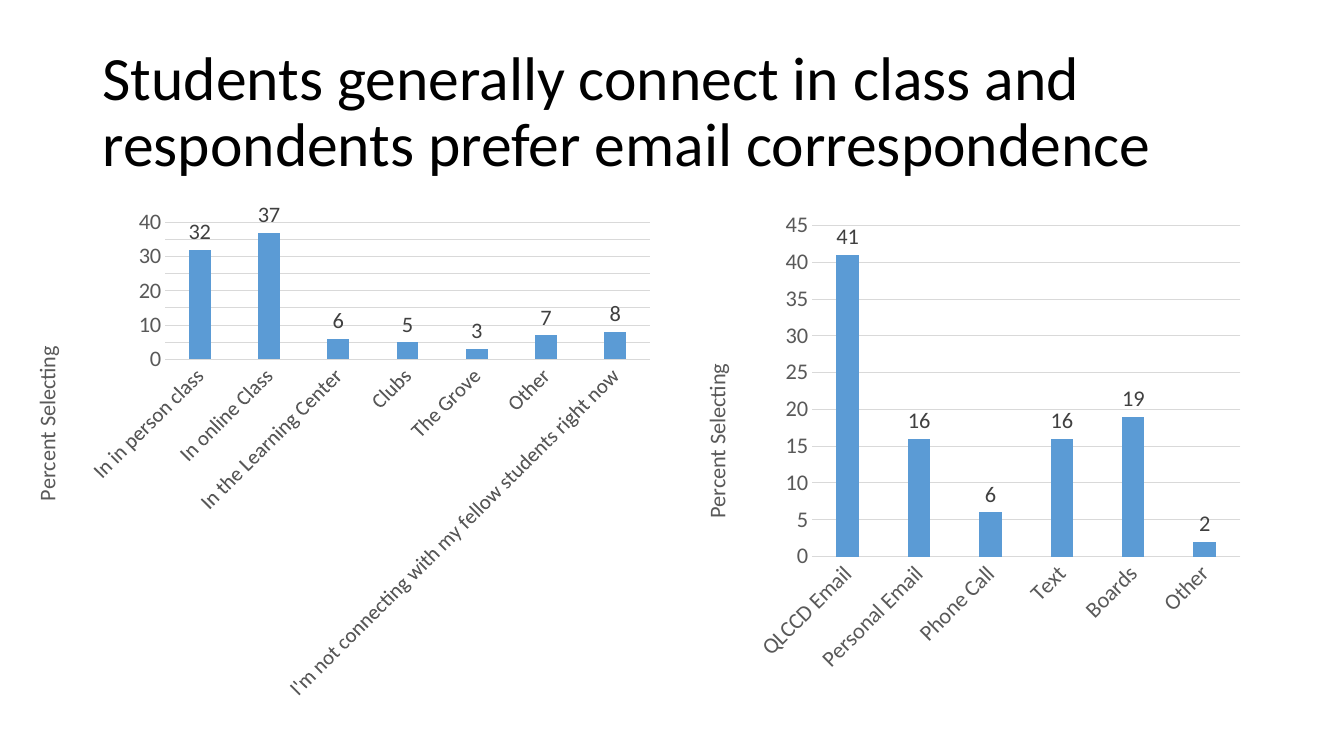
from dataclasses import dataclass

from lxml import etree
from pptx import Presentation
from pptx.chart.data import CategoryChartData
from pptx.dml.color import RGBColor
from pptx.enum.chart import XL_CHART_TYPE, XL_LABEL_POSITION, XL_TICK_MARK
from pptx.enum.text import MSO_ANCHOR, PP_ALIGN
from pptx.oxml.ns import qn
from pptx.util import Cm, Pt

COLUMNS = XL_CHART_TYPE.COLUMN_CLUSTERED
OUTSIDE_END = XL_LABEL_POSITION.OUTSIDE_END
NO_TICK = XL_TICK_MARK.NONE
MIDDLE = MSO_ANCHOR.MIDDLE
LEFT = PP_ALIGN.LEFT

TITLE_ONLY = 5
FONT = "Calibri"
BLACK, AXIS_GREY, LABEL_GREY = "000000", "595959", "404040"
RULE_GREY, BAR_BLUE = "D9D9D9", "5B9BD5"
CHART_TOP = Cm(5.08)


@dataclass(frozen=True)
class Survey:
    """One question's results; plot and caption are fractions of the chart."""
    left: float
    width: float
    height: float
    maximum: int
    choice_size: float
    plot: dict[str, float]
    caption: dict[str, float]
    percents: dict[str, int]


SURVEYS = (
    Survey(
        0.2, 16.51, 13.4, 40, 15,
        {"x": 0.24, "y": 0.03, "w": 0.74, "h": 0.26},
        {"x": 0.03, "y": 0.26},
        {"In in person class": 32, "In online Class": 37,
         "In the Learning Center": 6, "Clubs": 5, "The Grove": 3, "Other": 7,
         "I'm not connecting with my fellow students right now": 8},
    ),
    Survey(
        17.15, 14.4, 12.09, 45, 16,
        {"x": 0.23, "y": 0.05, "w": 0.75, "h": 0.69},
        {"x": 0.03, "y": 0.33},
        {"QLCCD Email": 41, "Personal Email": 16, "Phone Call": 6,
         "Text": 16, "Boards": 19, "Other": 2},
    ),
)


def rgb(value: str) -> RGBColor:
    return RGBColor.from_string(value)


def apply(target, formats: dict) -> None:
    for name, value in formats.items():
        setattr(target, name, value)


def style_font(font, size: float, color: str) -> None:
    apply(font, {"name": FONT, "size": Pt(size), "bold": False})
    font.color.rgb = rgb(color)


def style_line(line, color: str) -> None:
    line.color.rgb = rgb(color)
    line.width = Pt(0.75)


def place(parent, index: int, fractions: dict[str, float]) -> None:
    """Pin a chart part at fractions of the chart's size."""
    for automatic in parent.findall(qn("c:layout")):
        parent.remove(automatic)
    layout = etree.Element(qn("c:layout"))
    parent.insert(index, layout)
    manual = etree.SubElement(layout, qn("c:manualLayout"))
    settings = {"xMode": "edge", "yMode": "edge", **fractions}
    if "w" in fractions:
        settings = {"layoutTarget": "inner", **settings}
    for name, value in settings.items():
        etree.SubElement(manual, qn(f"c:{name}")).set("val", str(value))


def rotate(body, degrees: int) -> None:
    body.set("rot", str(degrees * 60000))
    body.set("vert", "horz")


def style_axes(chart, survey: Survey) -> None:
    choices, percent = chart.category_axis, chart.value_axis
    for axis, size in ((choices, survey.choice_size), (percent, 16)):
        apply(axis, {"major_tick_mark": NO_TICK, "minor_tick_mark": NO_TICK})
        style_font(axis.tick_labels.font, size, AXIS_GREY)
    style_line(choices.format.line, RULE_GREY)
    rotate(choices._element.find(qn("c:txPr")).find(qn("a:bodyPr")), -45)

    apply(percent, {"minimum_scale": 0, "maximum_scale": survey.maximum,
                    "major_unit": 5, "has_major_gridlines": True})
    apply(percent.tick_labels, {"number_format": "0", "number_format_is_linked": False})
    percent.format.line.fill.background()
    style_line(percent.major_gridlines.format.line, RULE_GREY)

    caption = percent.axis_title
    caption.text_frame.text = "Percent Selecting"
    style_font(caption.text_frame.paragraphs[0].runs[0].font, 16, AXIS_GREY)
    rotate(caption._element.find(".//" + qn("a:bodyPr")), -90)
    place(caption._element, 1, survey.caption)


def add_survey(slide, survey: Survey) -> None:
    answers = CategoryChartData(number_format="0")
    answers.categories = list(survey.percents)
    answers.add_series("Series 1", list(survey.percents.values()))
    chart = slide.shapes.add_chart(
        COLUMNS, Cm(survey.left), CHART_TOP, Cm(survey.width), Cm(survey.height), answers
    ).chart
    apply(chart, {"has_legend": False, "has_title": False})
    style_font(chart.font, 16, BLACK)
    style_axes(chart, survey)

    columns = chart.plots[0]
    apply(columns, {"gap_width": 219, "overlap": -27,
                    "vary_by_categories": False, "has_data_labels": True})
    apply(columns.data_labels, {"show_value": True, "position": OUTSIDE_END,
                                "number_format": "0", "number_format_is_linked": False})
    style_font(columns.data_labels.font, 16, LABEL_GREY)
    bars = columns.series[0].format.fill
    bars.solid()
    bars.fore_color.rgb = rgb(BAR_BLUE)
    place(chart._chartSpace.chart.plotArea, 0, survey.plot)


def add_headline(slide) -> None:
    headline = slide.shapes.title
    apply(headline, {"left": Cm(2.33), "top": Cm(1.02),
                     "width": Cm(29.21), "height": Cm(3.68)})
    frame = headline.text_frame
    frame.text = ("Students generally connect in class and "
                  "respondents prefer email correspondence")
    apply(frame, {"vertical_anchor": MIDDLE, "word_wrap": True})
    wording = frame.paragraphs[0]
    apply(wording, {"alignment": LEFT, "line_spacing": 0.9})
    style_font(wording.runs[0].font, 44, BLACK)


def main() -> None:
    deck = Presentation()
    apply(deck, {"slide_width": Cm(33.87), "slide_height": Cm(19.05)})
    slide = deck.slides.add_slide(deck.slide_layouts[TITLE_ONLY])
    add_headline(slide)
    for survey in SURVEYS:
        add_survey(slide, survey)
    deck.save("out.pptx")


if __name__ == "__main__":
    main()
